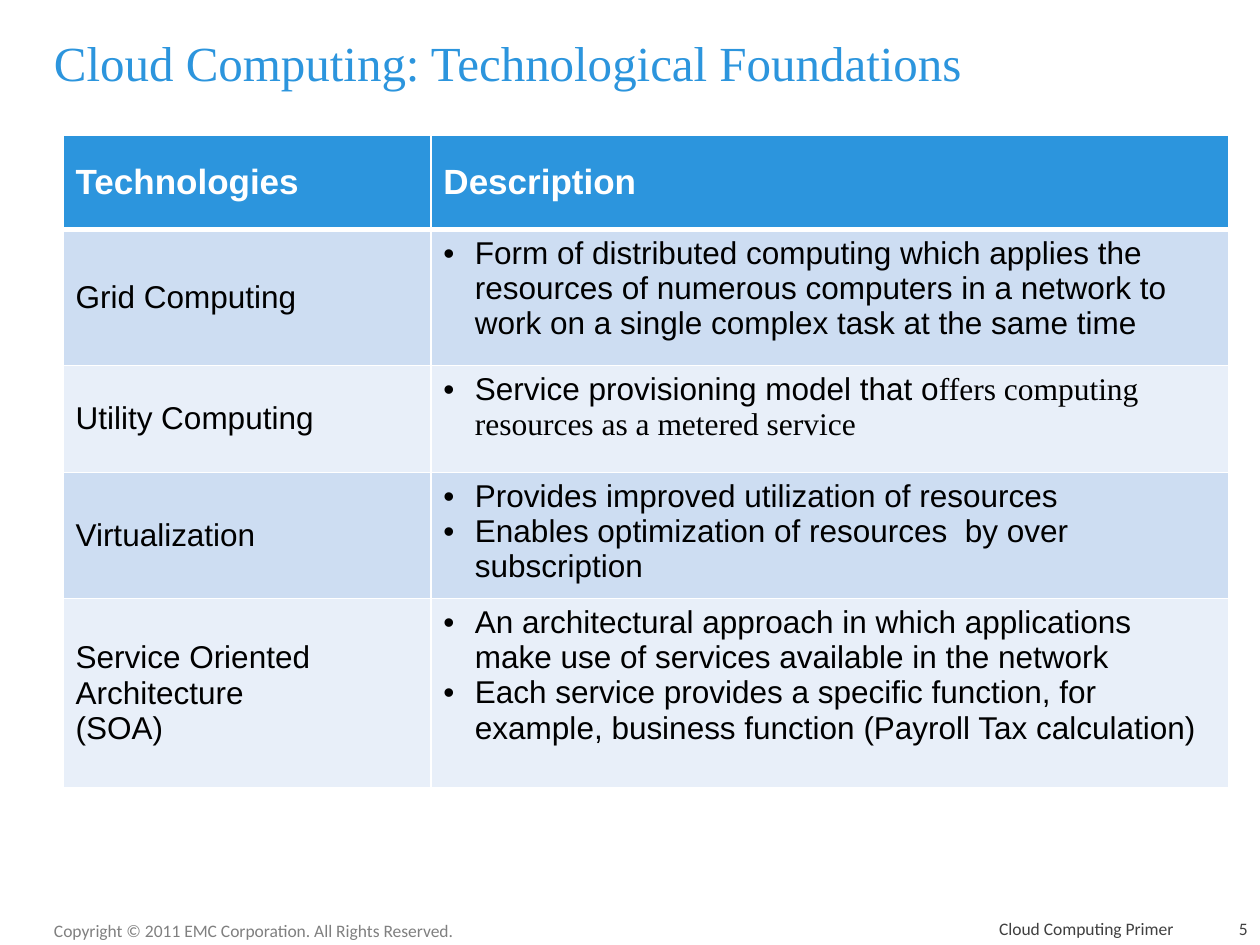
from lxml import etree
from pptx import Presentation
from pptx.dml.color import RGBColor
from pptx.enum.text import MSO_ANCHOR, PP_ALIGN
from pptx.oxml.ns import qn
from pptx.util import Pt

PX = 9144
TOP, MIDDLE, BOTTOM = MSO_ANCHOR.TOP, MSO_ANCHOR.MIDDLE, MSO_ANCHOR.BOTTOM
LEFT, RIGHT = PP_ALIGN.LEFT, PP_ALIGN.RIGHT
SANS, SERIF, SMALL = "Arial", "Times New Roman", "Calibri"
COLORS = {
    "blue": "2C95DD", "odd": "CDDDF2", "even": "E8EFF9", "white": "FFFFFF",
    "black": "000000", "grey": "808080", "dark": "404040",
}
COLUMNS = [292, 633]
ROWS = [75, 108, 85, 92, 150]
HEADINGS = ["Technologies", "Description"]
TECHNOLOGIES = [
    (["Grid Computing"],
     [[("Form of distributed computing which applies the resources of numerous "
        "computers in a network to work on a single complex task at the same time", SANS)]]),
    (["Utility Computing"],
     [[("Service provisioning model that o", SANS),
       ("ffers computing resources as a metered service", SERIF)]]),
    (["Virtualization"],
     [[("Provides improved utilization of resources", SANS)],
      [("Enables optimization of resources  by over subscription", SANS)]]),
    (["Service Oriented Architecture", "(SOA)"],
     [[("An architectural approach in which applications make use of services "
        "available in the network", SANS)],
      [("Each service provides a specific function, for example, business "
        "function (Payroll Tax calculation)", SANS)]]),
]


def add_span(para, text, font, size, color, bold=False):
    """Add one styled run to a paragraph."""
    span = para.add_run()
    span.text = text
    span.font.name = font
    span.font.size = Pt(size)
    span.font.bold = bold
    span.font.color.rgb = RGBColor.from_string(COLORS[color])


def add_label(page, box, text, font, size, color, anchor, align=LEFT):
    """Place a single-paragraph text box."""
    label = page.shapes.add_textbox(*(value * PX for value in box))
    frame = label.text_frame
    frame.word_wrap = True
    frame.vertical_anchor = anchor
    para = frame.paragraphs[0]
    para.alignment = align
    add_span(para, text, font, size, color)


def add_bullet(para):
    """Give a paragraph a hanging round bullet."""
    props = para._p.get_or_add_pPr()
    props.set("marL", str(25 * PX))
    props.set("indent", str(-25 * PX))
    etree.SubElement(props, qn("a:buFont"), typeface=SANS)
    etree.SubElement(props, qn("a:buChar"), char="•")


def style_cell(cell, fill, top=1, bottom=1):
    """Draw white borders around a cell and fill it."""
    props = cell._tc.get_or_add_tcPr()
    for side, width in (("L", 1), ("R", 1), ("T", top), ("B", bottom)):
        line = etree.SubElement(props, qn(f"a:ln{side}"), w=str(Pt(width)))
        solid = etree.SubElement(line, qn("a:solidFill"))
        etree.SubElement(solid, qn("a:srgbClr"), val=COLORS["white"])
    cell.fill.solid()
    cell.fill.fore_color.rgb = RGBColor.from_string(COLORS[fill])


def fill_cell(cell, paragraphs, size, color, bold=False, bullets=False):
    """Write paragraphs of (text, font) runs into a cell."""
    cell.vertical_anchor = TOP if bullets else MIDDLE
    frame = cell.text_frame
    for index, runs in enumerate(paragraphs):
        para = frame.add_paragraph() if index else frame.paragraphs[0]
        if bullets:
            add_bullet(para)
        for text, font in runs:
            add_span(para, text, font, size, color, bold)


def add_technology_table(page, box):
    """Build the table of technologies and their descriptions."""
    frame = page.shapes.add_table(len(ROWS), len(COLUMNS), *(value * PX for value in box))
    table = frame.table
    table.first_row = table.horz_banding = False
    for column, width in zip(table.columns, COLUMNS):
        column.width = width * PX
    for row, height in zip(table.rows, ROWS):
        row.height = height * PX
    for column, heading in enumerate(HEADINGS):
        cell = table.cell(0, column)
        style_cell(cell, "blue", bottom=3)
        fill_cell(cell, [[(heading, SANS)]], 20, "white", bold=True)
    for row, (names, points) in enumerate(TECHNOLOGIES, start=1):
        name_cell, point_cell = table.cell(row, 0), table.cell(row, 1)
        for cell in (name_cell, point_cell):
            style_cell(cell, "odd" if row % 2 else "even", top=3 if row == 1 else 1)
        fill_cell(name_cell, [[(name, SANS)] for name in names], 18, "black")
        fill_cell(point_cell, points, 18, "black", bullets=True)


def add_footer(page, box):
    """Place the copyright line, the deck name and the page number."""
    left, top, width, height = box
    add_label(page, (left, top, 342, 27),
              "Copyright © 2011 EMC Corporation. All Rights Reserved.",
              SMALL, 10, "grey", TOP)
    add_label(page, (left + 450, top, 458, height), "Cloud Computing Primer",
              SMALL, 10, "dark", BOTTOM, RIGHT)
    add_label(page, (left + width - 50, top, 50, height), "5",
              SMALL, 10, "dark", BOTTOM, RIGHT)


def main():
    """Build and save the deck."""
    deck = Presentation()
    deck.slide_width, deck.slide_height = 1000 * PX, 750 * PX
    page = deck.slides.add_slide(deck.slide_layouts[6])
    add_label(page, (33, 8, 925, 83), "Cloud Computing: Technological Foundations",
              SERIF, 28, "blue", MIDDLE)
    add_technology_table(page, (50, 107, sum(COLUMNS), sum(ROWS)))
    add_footer(page, (33, 725, 967, 25))
    deck.save("out.pptx")


if __name__ == "__main__":
    main()
